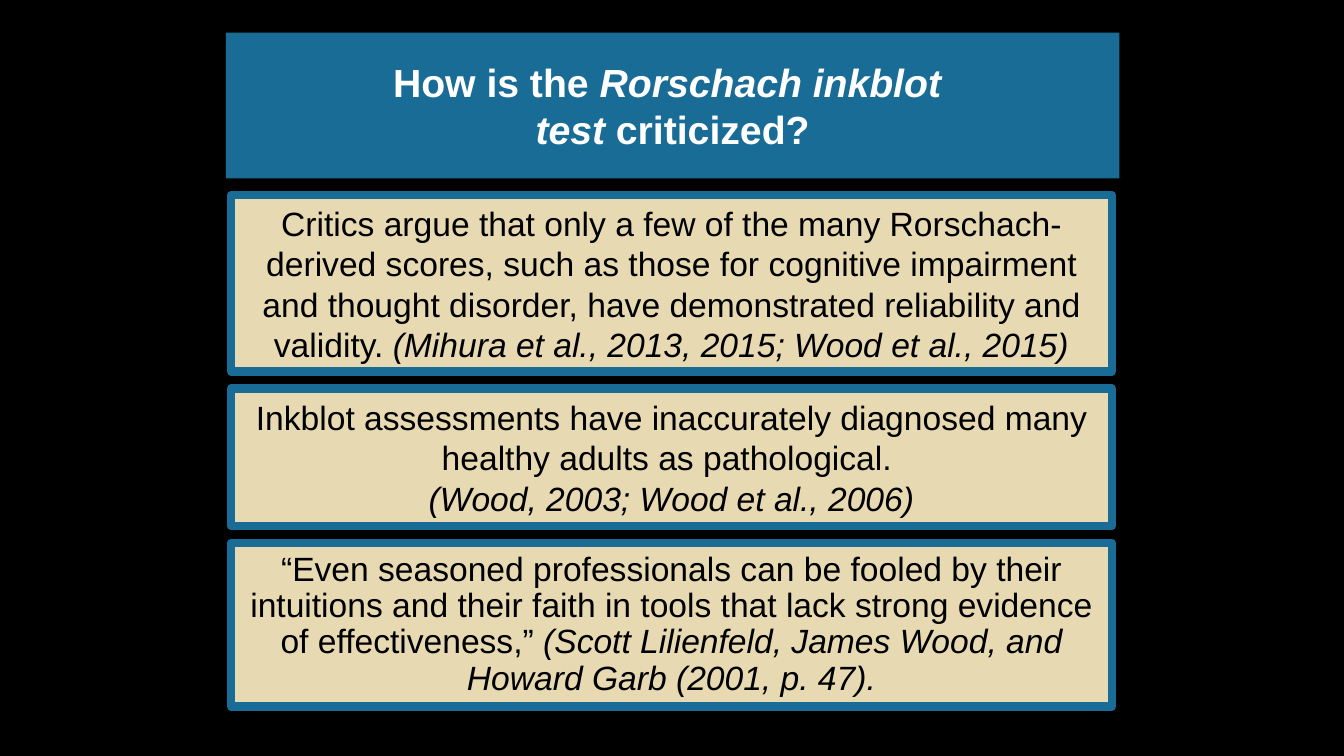
"""Build the slide on criticism of the Rorschach inkblot test."""
from copy import deepcopy
from dataclasses import dataclass

from lxml import etree
from pptx import Presentation
from pptx.dml.color import RGBColor
from pptx.enum.text import MSO_ANCHOR, MSO_AUTO_SIZE, PP_ALIGN
from pptx.oxml.ns import qn
from pptx.util import Emu, Pt

CENTER = PP_ALIGN.CENTER
MIDDLE = MSO_ANCHOR.MIDDLE
NO_AUTOFIT = MSO_AUTO_SIZE.NONE
EMU_PER_PX = 9525
COMPARISON_LAYOUT = 4


@dataclass(frozen=True)
class Theme:
    font: str = "Arial"
    background: str = "000000"
    blue: str = "186C96"
    sand: str = "E7D9B1"
    title_text: str = "FFFFFF"
    body_text: str = "000000"
    title_size: int = 28
    body_size: int = 24
    border: int = 6


@dataclass(frozen=True)
class Span:
    text: str
    italic: bool = False


@dataclass(frozen=True)
class Panel:
    height: int
    paragraphs: list[list[Span]]
    line_spacing: float = 1.0


THEME = Theme()
BREAK = Span("\n")
TITLE = [
    Span("How is the "),
    Span("Rorschach inkblot ", italic=True),
    BREAK,
    Span("test ", italic=True),
    Span("criticized?"),
]
PANELS = [
    Panel(168, [[
        Span("Critics argue that only a few of the many Rorschach-derived scores, "
             "such as those for cognitive impairment and thought disorder, "
             "have demonstrated reliability and validity. "),
        Span("(Mihura et al., 2013, 2015; Wood et al., 2015)", italic=True),
    ]]),
    Panel(131, [
        [Span("Inkblot assessments have inaccurately diagnosed many")],
        [Span("healthy adults as pathological. ")],
        [Span("(Wood, 2003; Wood et al., 2006)", italic=True)],
    ]),
    Panel(156, [[
        Span("“Even seasoned professionals can be fooled by their intuitions and their "
             "faith in tools that lack strong evidence of effectiveness,” "),
        Span("(Scott Lilienfeld, James Wood, and Howard Garb (2001, p. 47).", italic=True),
    ]], line_spacing=0.9),
]
PANEL_LEFT, PANEL_TOP, PANEL_WIDTH, PANEL_GAP = 220, 186, 839, 16


def px(length: int) -> Emu:
    """Turn pixels into EMU."""
    return Emu(length * EMU_PER_PX)


def rgb(color: str) -> RGBColor:
    """Turn a hex string into a colour."""
    return RGBColor.from_string(color)


def place(box, left: int, top: int, width: int, height: int, fill: str) -> None:
    """Move a placeholder, fill it and centre its text vertically."""
    box.left, box.top, box.width, box.height = map(px, (left, top, width, height))
    box.fill.solid()
    box.fill.fore_color.rgb = rgb(fill)
    frame = box.text_frame
    frame.word_wrap = True
    frame.auto_size = NO_AUTOFIT
    frame.vertical_anchor = MIDDLE


def add_span(para, text: str, *, size: int, color: str,
             bold: bool = False, italic: bool = False) -> None:
    """Add formatted text or a line break to a paragraph."""
    if text == BREAK.text:
        previous = para.runs[-1]
        para.add_line_break()
        para._p[-1].append(deepcopy(previous._r.rPr))
        return
    run = para.add_run()
    run.text = text
    font = run.font
    font.name, font.size = THEME.font, Pt(size)
    font.bold, font.italic = bold, italic
    font.color.rgb = rgb(color)


def write(box, paragraphs: list[list[Span]], *, size: int, color: str,
          bold: bool = False, line_spacing: float = 1.0) -> None:
    """Write centred paragraphs without bullets."""
    frame = box.text_frame
    for index, spans in enumerate(paragraphs):
        para = frame.add_paragraph() if index else frame.paragraphs[0]
        properties = para._p.get_or_add_pPr()
        properties.set("marL", "0")
        properties.set("indent", "0")
        etree.SubElement(properties, qn("a:buNone"))
        para.alignment = CENTER
        para.space_before = Pt(0)
        para.line_spacing = line_spacing
        for span in spans:
            add_span(para, span.text, size=size, color=color, bold=bold, italic=span.italic)


def main() -> None:
    """Build and save the deck."""
    deck = Presentation()
    deck.slide_width, deck.slide_height = px(1280), px(720)
    page = deck.slides.add_slide(deck.slide_layouts[COMPARISON_LAYOUT])
    page.background.fill.solid()
    page.background.fill.fore_color.rgb = rgb(THEME.background)

    title, *boxes = page.placeholders
    place(title, 215, 31, 851, 139, THEME.blue)
    write(title, [TITLE], size=THEME.title_size, color=THEME.title_text, bold=True)

    top = PANEL_TOP
    for box, panel in zip(boxes, PANELS):
        place(box, PANEL_LEFT, top, PANEL_WIDTH, panel.height, THEME.sand)
        box.line.color.rgb = rgb(THEME.blue)
        box.line.width = Pt(THEME.border)
        write(box, panel.paragraphs, size=THEME.body_size, color=THEME.body_text,
              line_spacing=panel.line_spacing)
        top += panel.height + PANEL_GAP

    for spare in boxes[len(PANELS):]:
        spare.element.getparent().remove(spare.element)
    deck.save("out.pptx")


if __name__ == "__main__":
    main()
